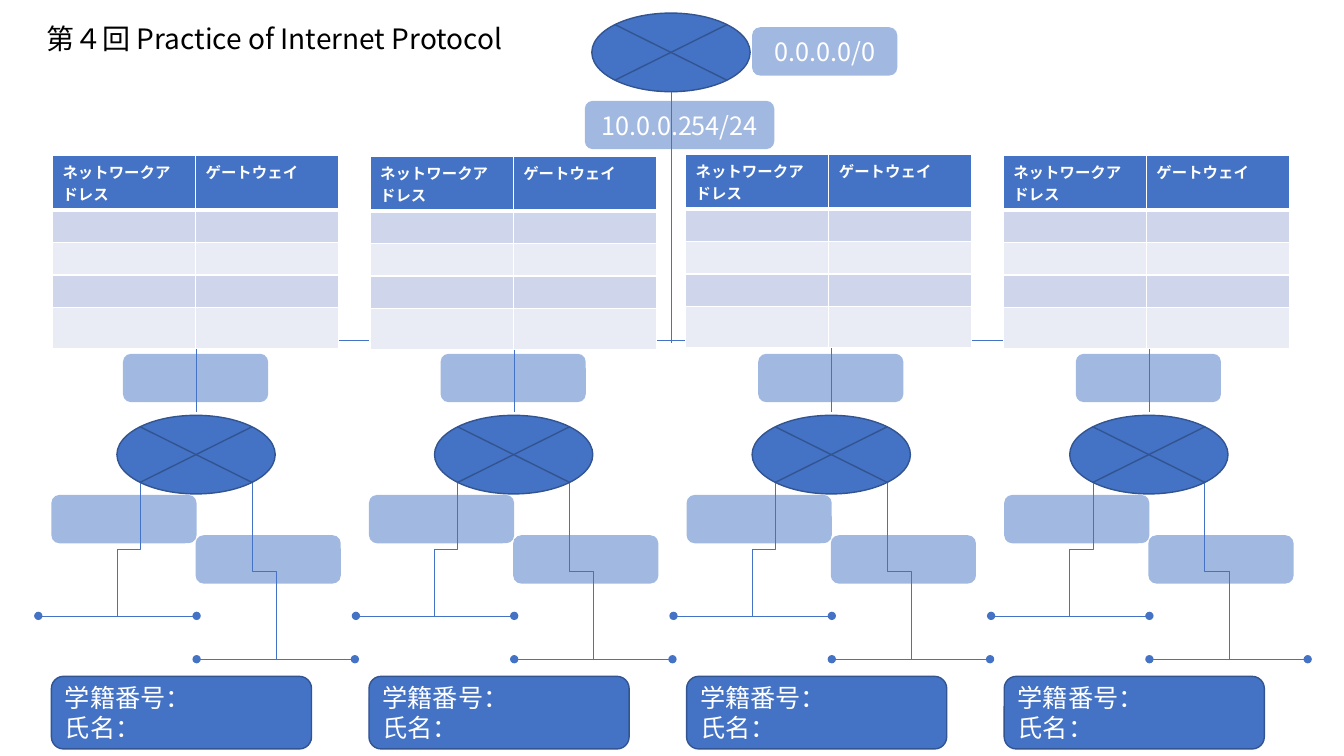
from dataclasses import dataclass

from lxml.etree import SubElement
from pptx import Presentation
from pptx.dml.color import RGBColor
from pptx.enum.shapes import MSO_CONNECTOR, MSO_SHAPE
from pptx.enum.text import MSO_ANCHOR, MSO_AUTO_SIZE, PP_ALIGN
from pptx.oxml.ns import qn
from pptx.util import Inches, Pt

FONT = "Noto Sans CJK JP"
COLORS = {
    "blue": "4472C4",
    "edge": "325491",
    "dark": "CFD5EA",
    "light": "E9EBF5",
    "white": "FFFFFF",
    "black": "000000",
}


@dataclass(frozen=True)
class Box:
    left: float
    top: float
    width: float = 1.44
    height: float = 0.48
    text: str = ""
    kind: MSO_SHAPE = MSO_SHAPE.ROUNDED_RECTANGLE
    solid: bool = False
    align: PP_ALIGN = PP_ALIGN.CENTER


@dataclass(frozen=True)
class Wire:
    x1: float
    y1: float
    x2: float
    y2: float
    dots: bool = False
    bent: bool = False


@dataclass(frozen=True)
class Grid:
    left: float
    top: float


def router(left: float, top: float) -> Box:
    return Box(left, top, 1.57, 0.78, kind=MSO_SHAPE.FLOWCHART_SUMMING_JUNCTION, solid=True)


# Top of the network
TRUNK = [Wire(1.14, 3.38, 12.19, 3.38, dots=True), Wire(6.66, 0.91, 6.66, 3.4)]
ROOT = router(5.87, 0.13)
ROUTES = [Box(5.8, 1, 1.88, text="10.0.0.254/24"), Box(7.46, 0.27, text="0.0.0.0/0")]

# One site, measured from its left end
STEP, FIRST = 3.15, 0.38
SITE = [
    router(0.78, 4.12),
    Wire(0, 6.11, 1.57, 6.11, dots=True),
    Wire(1.57, 6.54, 3.14, 6.54, dots=True),
    Wire(1.01, 4.79, 0.78, 6.11, bent=True),
    Wire(2.12, 4.79, 2.36, 6.54, bent=True),
    Box(0.13, 6.71, 2.58, 0.72, "学籍番号：\n氏名：", solid=True, align=PP_ALIGN.LEFT),
    Box(0.13, 4.91),
    Wire(1.57, 3.4, 1.57, 4.09),
    Box(1.56, 5.31),
    Box(0.84, 3.51),
]

# Routing tables
GRIDS = [Grid(0.52, 1.54), Grid(3.67, 1.55), Grid(6.8, 1.53), Grid(9.95, 1.54)]
HEADS = ["ネットワークアドレス", "ゲートウェイ"]
ROWS = [0.41, 0.27, 0.27, 0.25, 0.41]
COLUMN = 1.42


def paint(name: str) -> RGBColor:
    return RGBColor.from_string(COLORS[name])


def write(frame, text: str, *, size: float = 18, color: str = "white", bold: bool = False,
          align: PP_ALIGN = PP_ALIGN.LEFT, spacing: float = 1.0) -> None:
    frame.word_wrap = True
    frame.text = text
    for para in frame.paragraphs:
        para.alignment = align
        para.line_spacing = spacing
        for run in para.runs:
            run.font.size = Pt(size)
            run.font.bold = bold
            run.font.color.rgb = paint(color)
            run.font.name = FONT
            SubElement(run.font._element, qn("a:ea"), typeface=FONT)


def draw_box(shapes, box: Box, shift: float = 0) -> None:
    shape = shapes.add_shape(box.kind, Inches(box.left + shift), Inches(box.top),
                             Inches(box.width), Inches(box.height))
    shape.shadow.inherit = False
    shape.fill.solid()
    shape.fill.fore_color.rgb = paint("blue")
    if box.solid:
        shape.line.color.rgb = paint("edge")
        shape.line.width = Pt(1)
    else:
        shape.line.fill.background()
        tint = shape._element.spPr.find(qn("a:solidFill"))[0]
        SubElement(tint, qn("a:alpha"), val="50000")
    if box.text:
        shape.text_frame.vertical_anchor = MSO_ANCHOR.MIDDLE
        write(shape.text_frame, box.text, align=box.align)


def draw_wire(shapes, wire: Wire, shift: float = 0) -> None:
    x1, y1, x2, y2 = wire.x1 + shift, wire.y1, wire.x2 + shift, wire.y2
    kind, turn = MSO_CONNECTOR.STRAIGHT, 0
    if wire.bent:
        # A quarter turn makes the elbow leave downwards
        kind = MSO_CONNECTOR.ELBOW
        side = 1 if x2 < x1 else -1
        turn = 180 - 90 * side
        mid_x, mid_y = (x1 + x2) / 2, (y1 + y2) / 2
        long, short = side * (y2 - y1) / 2, abs(x2 - x1) / 2
        x1, y1, x2, y2 = mid_x - long, mid_y - short, mid_x + long, mid_y + short
    line = shapes.add_connector(kind, Inches(x1), Inches(y1), Inches(x2), Inches(y2))
    line.line.color.rgb = paint("blue")
    line.line.width = Pt(0.5)
    props = line._element.spPr
    if turn:
        props.find(qn("a:xfrm")).set("rot", str(turn * 60000))
    if wire.dots:
        for end in ("headEnd", "tailEnd"):
            SubElement(props.find(qn("a:ln")), qn(f"a:{end}"), type="oval")
    SubElement(props, qn("a:effectLst"))


def edge_cell(cell, row: int) -> None:
    for side in "LRTB":
        thick = (row, side) in ((0, "B"), (1, "T"))
        line = SubElement(cell._tc.get_or_add_tcPr(), qn(f"a:ln{side}"),
                          w=str(Pt(3 if thick else 1)))
        fill = SubElement(line, qn("a:solidFill"))
        SubElement(fill, qn("a:srgbClr"), val=COLORS["white"])


def draw_grid(shapes, grid: Grid) -> None:
    table = shapes.add_table(len(ROWS), len(HEADS), Inches(grid.left), Inches(grid.top),
                             Inches(COLUMN * len(HEADS)), Inches(sum(ROWS))).table
    for column in table.columns:
        column.width = Inches(COLUMN)
    for row, height in enumerate(ROWS):
        table.rows[row].height = Inches(height)
        for col, head in enumerate(HEADS):
            cell = table.cell(row, col)
            edge_cell(cell, row)
            cell.fill.solid()
            band = "dark" if row % 2 else "light"
            cell.fill.fore_color.rgb = paint(band if row else "blue")
            if row == 0:
                write(cell.text_frame, head, size=11, bold=True)
            else:
                # Empty cells keep the small type size
                mark = SubElement(cell.text_frame.paragraphs[0]._p, qn("a:endParaRPr"), sz="1100")
                for script in ("latin", "ea"):
                    SubElement(mark, qn(f"a:{script}"), typeface=FONT)


def main() -> None:
    deck = Presentation()
    deck.slide_width, deck.slide_height = Inches(13.33), Inches(7.5)
    slide = deck.slides.add_slide(deck.slide_layouts[5])
    shapes = slide.shapes

    # Title
    title = shapes.title
    title.left, title.top = Inches(0.36), Inches(0.22)
    title.width, title.height = Inches(4.73), Inches(0.37)
    title.text_frame.auto_size = MSO_AUTO_SIZE.NONE
    title.text_frame.vertical_anchor = MSO_ANCHOR.MIDDLE
    write(title.text_frame, "第４回 Practice of Internet Protocol", size=20, color="black",
          spacing=0.9)

    # Root router and trunk
    draw_box(shapes, ROOT)
    for wire in TRUNK:
        draw_wire(shapes, wire)

    # Four sites
    for site in range(len(GRIDS)):
        group = shapes.add_group_shape()
        for part in SITE:
            draw = draw_box if isinstance(part, Box) else draw_wire
            draw(group.shapes, part, FIRST + site * STEP)

    # Route labels and tables
    for label in ROUTES:
        draw_box(shapes, label)
    for grid in GRIDS:
        draw_grid(shapes, grid)

    deck.save("out.pptx")


if __name__ == "__main__":
    main()
